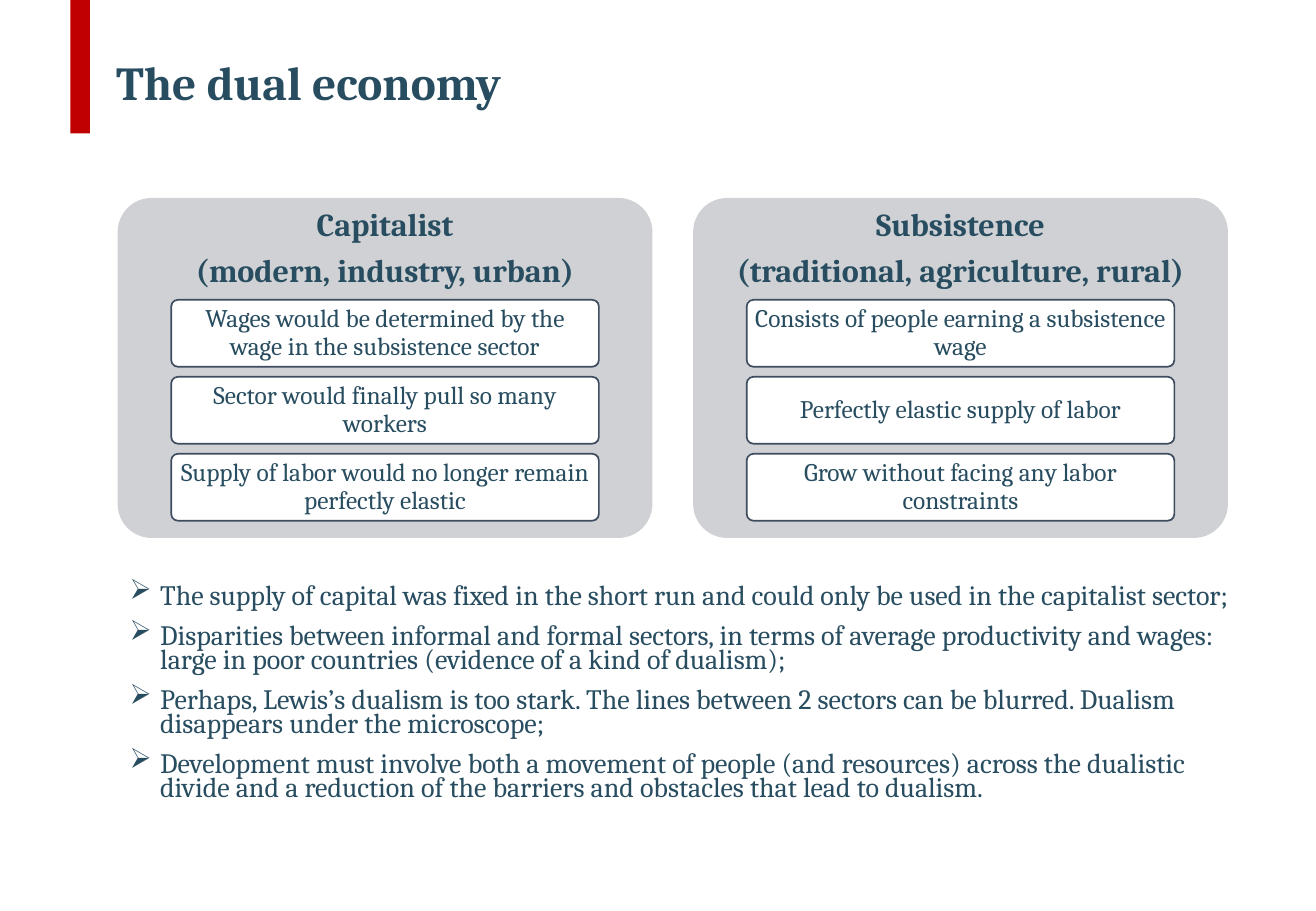
"""Build the slide on the dual economy."""
from lxml.etree import SubElement as Sub
from pptx import Presentation
from pptx.dml.color import RGBColor
from pptx.enum.shapes import MSO_SHAPE as Kind
from pptx.enum.text import MSO_ANCHOR as Anchor, PP_ALIGN as Align
from pptx.oxml.ns import qn
from pptx.util import Cm, Pt

INK = RGBColor(0x28, 0x4D, 0x60)
RED = RGBColor(0xC0, 0x00, 0x00)
GREY = RGBColor(0xCF, 0xD1, 0xD4)
WHITE = RGBColor(0xFF, 0xFF, 0xFF)
EDGE = RGBColor(0x3E, 0x4C, 0x60)

TITLE = {
    "font": {"size": Pt(28), "bold": True},
    "para": {"line_spacing": 0.9},
    "frame": {"vertical_anchor": Anchor.MIDDLE},
}
HEAD = {
    "font": {"size": Pt(19), "bold": True},
    "para": {"alignment": Align.CENTER, "line_spacing": 0.9, "space_after": Pt(6.65)},
    "frame": {"vertical_anchor": Anchor.MIDDLE, "margin_left": Cm(0.2),
              "margin_right": Cm(0.2), "margin_top": Cm(0.2), "margin_bottom": Cm(0.2)},
}
CARD = {
    "font": {"size": Pt(15)},
    "para": {"alignment": Align.CENTER, "line_spacing": 0.9},
    "frame": {"vertical_anchor": Anchor.MIDDLE, "margin_left": Cm(0.1),
              "margin_right": Cm(0.1), "margin_top": Cm(0.08), "margin_bottom": Cm(0.08)},
}
BODY = {
    "font": {"size": Pt(16.6)},
    "para": {"line_spacing": 0.7, "space_before": Pt(10)},
    "frame": {"vertical_anchor": Anchor.TOP},
}

SECTORS = [
    (["Capitalist", "(modern, industry, urban)"],
     ["Wages would be determined by the wage in the subsistence sector",
      "Sector would finally pull so many workers",
      "Supply of labor would no longer remain perfectly elastic"]),
    (["Subsistence", "(traditional, agriculture, rural)"],
     ["Consists of people earning a subsistence wage",
      "Perfectly elastic supply of labor",
      "Grow without facing any labor constraints"]),
]
POINTS = [
    "The supply of capital was fixed in the short run and could only be used in the capitalist sector;",
    "Disparities between informal and formal sectors, in terms of average productivity and wages: "
    "large in poor countries (evidence of a kind of dualism);",
    "Perhaps, Lewis’s dualism is too stark. The lines between 2 sectors can be blurred. "
    "Dualism disappears under the microscope;",
    "Development must involve both a movement of people (and resources) across the dualistic "
    "divide and a reduction of the barriers and obstacles that lead to dualism.",
]


def apply(item, values):
    """Set each named value on the item."""
    for name, value in values.items():
        setattr(item, name, value)


class Deck:
    """Hold the style and the current slide."""

    def __init__(self, wide, high):
        """Start a deck with one blank slide."""
        self.show = Presentation()
        apply(self.show, {"slide_width": Cm(wide), "slide_height": Cm(high)})
        self.slide = self.show.slides.add_slide(self.show.slide_layouts[6])
        self.base = {"name": "Cambria"}

    def fill(self, frame, lines, style):
        """Fill a text frame with styled paragraphs."""
        apply(frame, {"word_wrap": True, **style["frame"]})
        for i, line in enumerate(lines):
            para = frame.add_paragraph() if i else frame.paragraphs[0]
            apply(para, style["para"])
            run = para.add_run()
            run.text = line
            apply(run.font, {**self.base, **style["font"]})
            run.font.color.rgb = INK

    def text(self, box, lines, style):
        """Add a text box and return its frame."""
        frame = self.slide.shapes.add_textbox(*map(Cm, box)).text_frame
        self.fill(frame, lines, style)
        return frame

    def shape(self, kind, box, fill, edge=None):
        """Add a filled shape, with an outline if an edge colour is given."""
        shape = self.slide.shapes.add_shape(kind, *map(Cm, box))
        shape.shadow.inherit = False
        shape.fill.solid()
        shape.fill.fore_color.rgb = fill
        if edge is None:
            shape.line.fill.background()
        else:
            shape.line.color.rgb = edge
            shape.line.width = Pt(1)
        if kind == Kind.ROUNDED_RECTANGLE:
            shape.adjustments[0] = 0.1
        return shape

    def card(self, box, line):
        """Add an outlined card with its text."""
        shape = self.shape(Kind.ROUNDED_RECTANGLE, box, WHITE, EDGE)
        self.fill(shape.text_frame, [line], CARD)

    def panel(self, left, top, head, cards):
        """Add a sector panel with its heading and cards."""
        self.shape(Kind.ROUNDED_RECTANGLE, (left, top, 11.18, 7.11), GREY)
        self.text((left, top, 11.18, 2.13), head, HEAD)
        for i, line in enumerate(cards):
            self.card((left + 1.12, top + 2.13 + i * 1.61, 8.94, 1.4), line)

    def bullets(self, box, lines):
        """Add a list with arrow bullets."""
        for para in self.text(box, lines, BODY).paragraphs:
            props = para._p.get_or_add_pPr()
            props.set("marL", str(Cm(0.64)))
            props.set("indent", str(-Cm(0.64)))
            Sub(props, qn("a:buChar"), char="➢")


def main():
    """Draw the slide and save it."""
    deck = Deck(27.51, 19.05)
    deck.text((2.18, 0.41, 23.72, 2.74), ["The dual economy"], TITLE)
    deck.shape(Kind.RECTANGLE, (1.47, 0, 0.41, 2.79), RED)
    for i, (head, cards) in enumerate(SECTORS):
        deck.panel(2.46 + i * 12.03, 4.14, head, cards)
    deck.bullets((2.46, 12.14, 23.65, 5.92), POINTS)
    deck.show.save("out.pptx")


if __name__ == "__main__":
    main()
